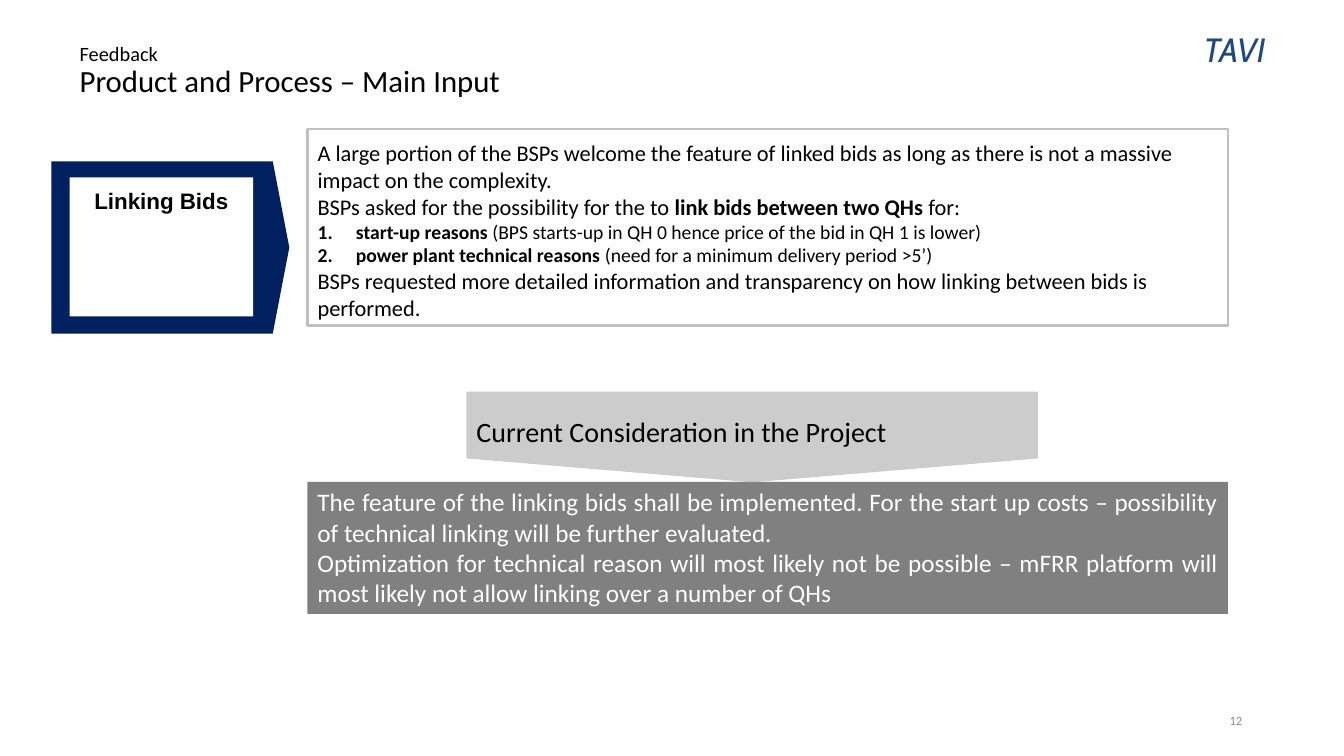
from lxml import etree
from pptx import Presentation
from pptx.dml.color import RGBColor
from pptx.enum.shapes import MSO_SHAPE as Shape
from pptx.enum.text import MSO_ANCHOR as Anchor, PP_ALIGN as Align
from pptx.oxml.ns import qn
from pptx.util import Inches, Pt

COLORS = {
    "black": "000000", "white": "FFFFFF", "navy": "002060", "mark": "1F497D",
    "border": "C0C0C0", "light": "CCCCCC", "gray": "808080", "number": "8C8C8C",
}


class SlideBuilder:
    """Holds the style and the current slide."""

    font = "Calibri"

    def __init__(self, prs):
        self.s = prs.slides.add_slide(prs.slide_layouts[1])

    def color(self, name):
        return RGBColor.from_string(COLORS[name])

    def place(self, sp, box):
        sp.left, sp.top, sp.width, sp.height = [Inches(v) for v in box]

    def run(self, p, text, size, color="black", bold=False, italic=False, font=None):
        r = p.add_run()
        r.text = text
        r.font.name = font or self.font
        r.font.size = Pt(size)
        r.font.bold = bold
        r.font.italic = italic
        r.font.color.rgb = self.color(color)
        return r

    def frame(self, sp, anchor=Anchor.TOP, inset=(0.1, 0.05), wrap=True):
        tf = sp.text_frame
        tf.word_wrap = wrap
        tf.vertical_anchor = anchor
        tf.margin_left = tf.margin_right = Inches(inset[0])
        tf.margin_top = tf.margin_bottom = Inches(inset[1])
        return tf

    def paragraphs(self, tf, rows, align=Align.LEFT):
        """Each row is a list of (text, size, style) runs."""
        for i, row in enumerate(rows):
            p = tf.paragraphs[0] if i == 0 else tf.add_paragraph()
            p.alignment = align
            for text, size, style in row:
                self.run(p, text, size, **style)

    def title(self, box, kicker, heading):
        sp = self.s.shapes.title
        self.place(sp, box)
        p = self.frame(sp, Anchor.MIDDLE).paragraphs[0]
        p.alignment = Align.LEFT
        p.line_spacing = 0.9
        self.run(p, kicker, 14.5)
        p.add_line_break()
        self.run(p, heading, 22)

    def body(self, box, rows, numbered):
        sp = self.s.placeholders[1]
        self.place(sp, box)
        sp.line.color.rgb = self.color("border")
        sp.line.width = Pt(1.5)
        tf = self.frame(sp, inset=(0.1, 0.1))
        self.paragraphs(tf, rows)
        for i, p in enumerate(tf.paragraphs):
            p.space_before = Pt(0)
            pPr = p._p.get_or_add_pPr()
            indent = Inches(0.38) if i in numbered else 0
            pPr.set("marL", str(indent))
            pPr.set("indent", str(-indent))
            if i in numbered:
                etree.SubElement(pPr, qn("a:buFont"), typeface="+mj-lt")
                etree.SubElement(pPr, qn("a:buAutoNum"), type="arabicPeriod")
            else:
                etree.SubElement(pPr, qn("a:buNone"))

    def text(self, box, rows, align, anchor=Anchor.TOP):
        sp = self.s.shapes.add_textbox(*[Inches(v) for v in box])
        self.paragraphs(self.frame(sp, anchor), rows, align)

    def shape(self, kind, box, fill, point=None):
        sp = self.s.shapes.add_shape(kind, *[Inches(v) for v in box])
        sp.shadow.inherit = False
        sp.fill.solid()
        sp.fill.fore_color.rgb = self.color(fill)
        sp.line.fill.background()
        if point is not None:
            sp.adjustments[0] = point
        return sp


def main():
    prs = Presentation()
    prs.slide_width, prs.slide_height = Inches(13.33), Inches(7.5)
    b = SlideBuilder(prs)
    bold, white = {"bold": True}, {"color": "white"}

    # Header and slide number
    b.title((0.69, 0.36, 9.95, 0.7), "Feedback", "Product and Process – Main Input")
    mark = {"color": "mark", "italic": True, "font": "Cabin"}
    b.text((8.97, 0.24, 3.68, 0.5), [[("TAVI", 24, mark)]], Align.RIGHT)
    b.text((9.42, 6.95, 3, 0.4), [[("12", 9, {"color": "number"})]],
           Align.RIGHT, Anchor.MIDDLE)

    # Topic arrow with its label
    b.shape(Shape.PENTAGON, (0.51, 1.6, 2.36, 1.71), "navy", 0.096)
    label = b.shape(Shape.RECTANGLE, (0.69, 1.76, 1.82, 1.38), "white")
    b.paragraphs(b.frame(label, inset=(0.1, 0.1)),
                 [[("Linking Bids", 16, {"bold": True, "font": "Arial"})]], Align.CENTER)

    # Feedback received
    b.body((3.05, 1.28, 9.13, 1.95), [
        [("A large portion of the BSPs welcome the feature of linked bids as long as "
          "there is not a massive impact on the complexity.", 16, {})],
        [("BSPs asked for the possibility for the to ", 16, {}),
         ("link bids between two QHs ", 16, bold), ("for:", 16, {})],
        [("start-up reasons ", 14, bold),
         ("(BPS starts-up in QH 0 hence price of the bid in QH 1 is lower)", 14, {})],
        [("power plant technical reasons ", 14, bold),
         ("(need for a minimum delivery period >5’)", 14, {})],
        [("BSPs requested more detailed information and transparency on how linking "
          "between bids is performed.", 16, {})],
    ], numbered=(2, 3))

    # Down arrow: turned shape, text turned back upright
    arrow = b.shape(Shape.PENTAGON, (7.01, 1.5, 0.9, 5.67), "light", 0.263)
    arrow.rotation = 90
    tf = b.frame(arrow, Anchor.MIDDLE, (0.05, 0.1))
    tf._txBody.bodyPr.set("vert", "vert270")
    b.paragraphs(tf, [[("Current Consideration in the Project", 20, {})]])

    # Project position
    answer = b.shape(Shape.RECTANGLE, (3.05, 4.78, 9.13, 1.31), "gray")
    b.paragraphs(b.frame(answer), [
        [("The feature of the linking bids shall be implemented. For the start up costs – "
          "possibility of technical linking will be further evaluated.", 18, white)],
        [("Optimization for technical reason will most likely not be possible – mFRR "
          "platform will most likely not allow linking over a number of QHs", 18, white)],
    ], Align.JUSTIFY)

    prs.save("out.pptx")


if __name__ == "__main__":
    main()
